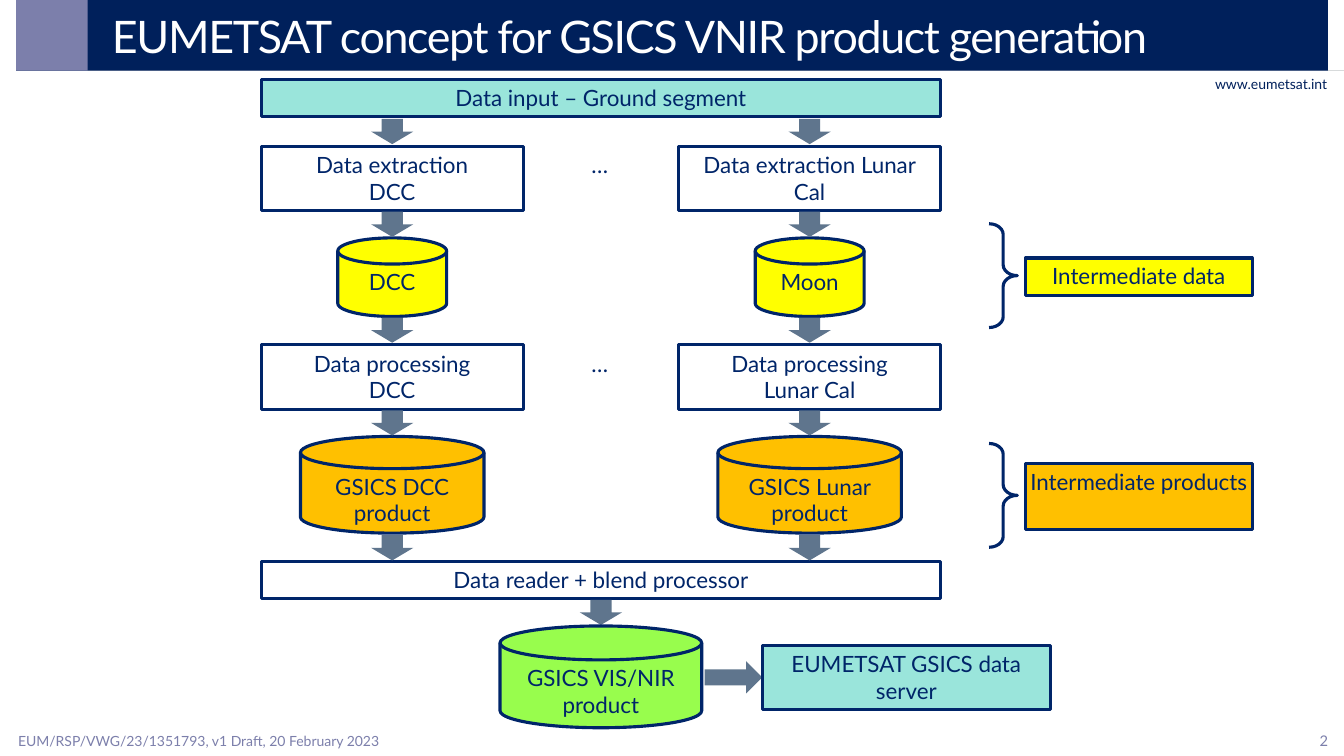
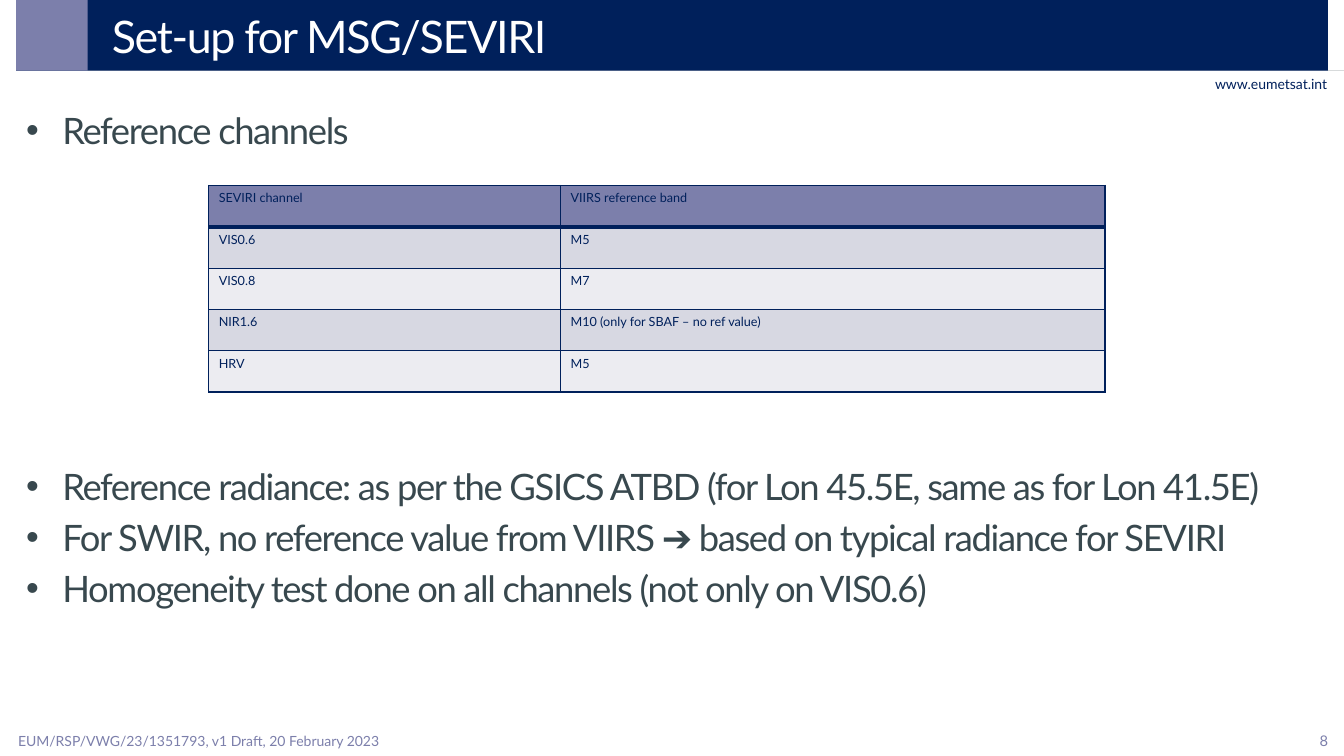
from dataclasses import dataclass

from lxml import etree
from pptx import Presentation
from pptx.dml.color import RGBColor
from pptx.enum.shapes import MSO_CONNECTOR, MSO_SHAPE
from pptx.enum.text import MSO_ANCHOR, PP_ALIGN
from pptx.oxml.ns import qn
from pptx.util import Pt

RECT = MSO_SHAPE.RECTANGLE
DISK = MSO_SHAPE.FLOWCHART_MAGNETIC_DISK
DOWN = MSO_SHAPE.DOWN_ARROW
RIGHT = MSO_SHAPE.RIGHT_ARROW
BRACE = MSO_SHAPE.RIGHT_BRACE
STRAIGHT = MSO_CONNECTOR.STRAIGHT
LEFT, MID, END = PP_ALIGN.LEFT, PP_ALIGN.CENTER, PP_ALIGN.RIGHT
TOP, CENTRE = MSO_ANCHOR.TOP, MSO_ANCHOR.MIDDLE

SCALE = 9144  # EMU per px, 100 px to the inch


@dataclass(frozen=True)
class Theme:
    font: str = "Lato"
    # Colours
    navy: str = "00205B"
    ink: str = "002569"
    lilac: str = "7C7FAB"
    slate: str = "38484E"
    steel: str = "5F758D"
    white: str = "FFFFFF"
    aqua: str = "9AE5DB"
    yellow: str = "FFFF00"
    amber: str = "FFC000"
    green: str = "98FD4D"
    bands: tuple = ("D7D8E2", "ECECF1")
    # Type sizes and line weight
    title: float = 32
    body: float = 26
    label: float = 16
    small: float = 10
    page: float = 10.5
    cell: float = 9
    line: float = 2.25


def px(n):
    return int(n * SCALE)


def rgb(code):
    return RGBColor.from_string(code)


def add(parent, tag, **attrs):
    return etree.SubElement(parent, qn(tag), attrs)


class Deck:
    def __init__(self, theme):
        self.theme = theme
        self.file = Presentation()
        self.file.slide_width, self.file.slide_height = px(1333), px(750)
        self.shapes = None

    def slide(self, title, page):
        """Start a slide with its band, title, web address and footer."""
        t = self.theme
        self.shapes = self.file.slides.add_slide(self.file.slide_layouts[6]).shapes
        self.rule(16, 70, 1333)
        self.text(1172, 70, 154, 27, ["www.eumetsat.int"], t.small, t.navy, END)
        self.text(18, 727, 506, 17,
                  ["EUM/RSP/VWG/23/1351793, v1 Draft, 20 February 2023"],
                  t.small, t.lilac, inset=(0, 0, 0, 0))
        self.text(1260, 721, 67, 29, [page], t.page, t.lilac, END)
        self.shape(RECT, 16, -1, 1301, 71, t.navy)
        self.shape(RECT, 16, -1, 71, 71, t.lilac)
        self.text(87, 0, 1246, 70, [title], t.title, t.white,
                  inset=(24, 4, 4, 4), anchor=CENTRE, track=-1)

    def rule(self, x, y, end):
        """Faint line under the title band."""
        line = self.shapes.add_connector(STRAIGHT, px(x), px(y), px(end), px(y))
        line.line.width = Pt(0.5)
        line.line.color.rgb = rgb(self.theme.slate)
        props = line._element.spPr
        add(props.find(".//" + qn("a:srgbClr")), "a:alpha", val="20000")
        add(props, "a:effectLst")

    def fill(self, frame, lines, size, color, align=LEFT,
             inset=(10, 5, 10, 5), anchor=TOP, track=0, bullet=False):
        """Write one paragraph per line into a text frame."""
        frame.word_wrap = True
        frame.vertical_anchor = anchor
        (frame.margin_left, frame.margin_top,
         frame.margin_right, frame.margin_bottom) = map(px, inset)
        for i, line in enumerate(lines):
            para = frame.add_paragraph() if i else frame.paragraphs[0]
            para.alignment = align
            if bullet:
                props = para._p.get_or_add_pPr()
                props.set("marL", str(px(36)))
                props.set("indent", str(px(-36)))
                add(props, "a:buFont", typeface="Arial")
                add(props, "a:buChar", char="•")
                if i:
                    para.space_before = Pt(size * 0.2)
            run = para.add_run()
            run.text = line
            run.font.name = self.theme.font
            run.font.size = Pt(size)
            run.font.color.rgb = rgb(color)
            if track:
                run._r.get_or_add_rPr().set("spc", str(track * 100))

    def text(self, x, y, w, h, lines, size, color, align=LEFT, **style):
        box = self.shapes.add_textbox(px(x), px(y), px(w), px(h))
        self.fill(box.text_frame, lines, size, color, align, **style)

    def shape(self, kind, x, y, w, h, fill=None, edge=None):
        item = self.shapes.add_shape(kind, px(x), px(y), px(w), px(h))
        item.shadow.inherit = False
        if fill:
            item.fill.solid()
            item.fill.fore_color.rgb = rgb(fill)
        else:
            item.fill.background()
        if edge:
            item.line.color.rgb = rgb(edge)
            item.line.width = Pt(self.theme.line)
        else:
            item.line.fill.background()
        return item

    def node(self, kind, x, y, w, h, lines, fill=None, tight=False):
        """Outlined box or disk with a centred label."""
        t = self.theme
        item = self.shape(kind, x, y, w, h, fill, t.ink)
        inset = (4, 4, 4, 4) if tight else (10, 5, 10, 5)
        self.fill(item.text_frame, lines, t.label, t.ink, MID, inset)

    def disk(self, mid, y, w, h, label, fill):
        self.node(DISK, mid - w // 2, y, w, h, [label], fill, tight=True)

    def down(self, mid, y):
        self.shape(DOWN, mid - 21, y, 42, 25, self.theme.steel)

    def legend(self, top, y, h, label, fill):
        """Brace with the name of the level it spans."""
        brace = self.shape(BRACE, 981, top, 28, 103, edge=self.theme.ink)
        brace.adjustments[0] = 0.38
        self.node(RECT, 1017, y, 225, h, [label], fill, tight=True)

    def bullets(self, y, h, lines):
        t = self.theme
        self.text(16, y, 1280, h, lines, t.body, t.slate, track=-1, bullet=True)

    def table(self, x, y, widths, high, rows):
        t = self.theme
        grid = self.shapes.add_table(len(rows), len(widths), px(x), px(y),
                                     px(sum(widths)), px(high * len(rows))).table
        for col, width in zip(grid.columns, widths):
            col.width = px(width)
        for r, row in enumerate(rows):
            grid.rows[r].height = px(high)
            for c, word in enumerate(row):
                cell = grid.cell(r, c)
                self.fill(cell.text_frame, [word], t.cell, t.navy)
                # The line between head and body is heavier
                self.border(cell, 3 if r == 1 else 1, 3 if r == 0 else 1)
                cell.fill.solid()
                cell.fill.fore_color.rgb = rgb(t.bands[(r - 1) % 2] if r else t.lilac)

    def border(self, cell, top, base):
        props = cell._tc.get_or_add_tcPr()
        for side, width in zip("LRTB", (1, 1, top, base)):
            line = add(props, "a:ln" + side, w=str(Pt(width)))
            add(add(line, "a:solidFill"), "a:srgbClr", val=self.theme.navy)


def flow(deck):
    t = deck.theme
    deck.slide("EUMETSAT concept for GSICS VNIR product generation", "2")
    deck.node(RECT, 259, 79, 674, 37, ["Data input – Ground segment"], t.aqua)
    deck.node(RECT, 259, 557, 674, 37, ["Data reader + blend processor"])

    # One column per method
    for mid, take, data, work, goods in (
        (389, ["Data extraction", "DCC"], "DCC",
         ["Data processing", "DCC"], "GSICS DCC product"),
        (803, ["Data extraction Lunar Cal"], "Moon",
         ["Data processing", "Lunar Cal"], "GSICS Lunar product"),
    ):
        deck.node(RECT, mid - 130, 145, 260, 64, take)
        deck.disk(mid, 236, 108, 78, data, t.yellow)
        deck.node(RECT, mid - 130, 342, 260, 64, work)
        deck.disk(mid, 433, 182, 96, goods, t.amber)
        for y in (118, 210, 315, 407, 531):
            deck.down(mid, y)
    for y in (145, 342):
        deck.text(517, y, 156, 37, ["…"], t.label, t.ink, MID)

    # Blended product and its server
    deck.down(596, 595)
    deck.disk(596, 621, 200, 101, "GSICS VIS/NIR product", t.green)
    deck.shape(RIGHT, 699, 656, 57, 32, t.steel)
    deck.node(RECT, 756, 640, 286, 64, ["EUMETSAT GSICS data server"], t.aqua)

    # Legend
    deck.legend(222, 256, 37, "Intermediate data", t.yellow)
    deck.legend(440, 460, 65, "Intermediate products", t.amber)


def setup(deck):
    deck.slide("Set-up for MSG/SEVIRI", "8")
    deck.bullets(102, 55, ["Reference channels"])
    deck.table(207, 184, (349, 540), 41, (
        ("SEVIRI channel", "VIIRS reference band"),
        ("VIS0.6", "M5"),
        ("VIS0.8", "M7"),
        ("NIR1.6", "M10 (only for SBAF – no ref value)"),
        ("HRV", "M5"),
    ))
    deck.bullets(456, 160, [
        "Reference radiance: as per the GSICS ATBD (for Lon 45.5E, same as for Lon 41.5E)",
        "For SWIR, no reference value from VIIRS ➔ based on typical radiance for SEVIRI",
        "Homogeneity test done on all channels (not only on VIS0.6)",
    ])


def main():
    deck = Deck(Theme())
    flow(deck)
    setup(deck)
    deck.file.save("out.pptx")


if __name__ == "__main__":
    main()
